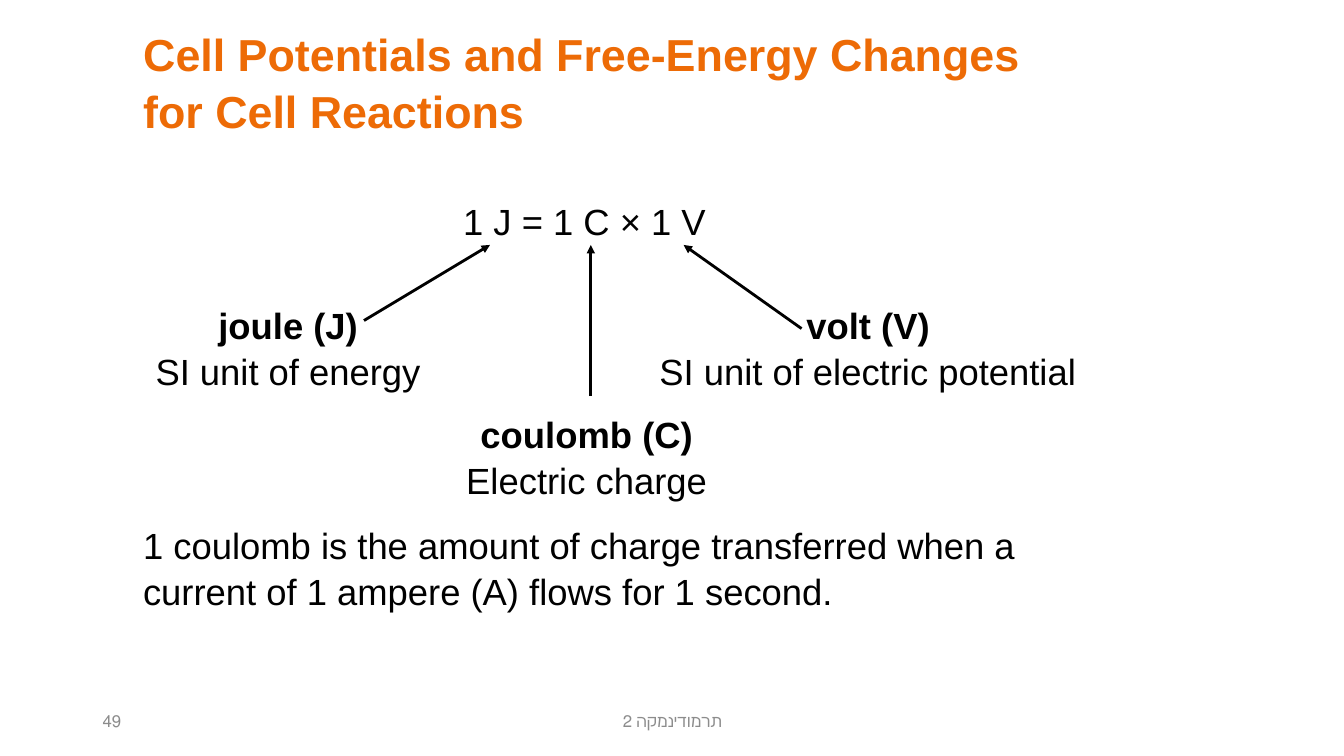
from dataclasses import dataclass

from lxml import etree
from pptx import Presentation
from pptx import util as u
from pptx.dml.color import RGBColor
from pptx.enum import shapes, text
from pptx.oxml.ns import qn

BLACK, ORANGE, GREY = "000000", "ED6B06", "8C8C8C"
LEFT, CENTER = text.PP_ALIGN.LEFT, text.PP_ALIGN.CENTER
TOP, MIDDLE = text.MSO_ANCHOR.TOP, text.MSO_ANCHOR.MIDDLE


@dataclass
class TextBox:
    lines: list[str]
    box: tuple[float, float, float, float]
    size: int = 26
    color: str = BLACK
    font: str = "Arial"
    bold_first: bool = False
    align: text.PP_ALIGN = LEFT
    anchor: text.MSO_ANCHOR = TOP
    wrap: bool = True
    left_inset: float = 0.1
    line_spacing: float = 1.06
    rtl: bool = False


@dataclass
class Arrow:
    start: tuple[float, float]
    end: tuple[float, float]


def rgb(color: str) -> RGBColor:
    return RGBColor.from_string(color)


def unit_label(name: str, meaning: str, box: tuple[float, float, float, float]) -> TextBox:
    return TextBox([name, meaning], box, bold_first=True, align=CENTER, wrap=False)


def footer(line: str, box: tuple[float, float, float, float], align: text.PP_ALIGN) -> TextBox:
    return TextBox([line], box, 12, GREY, "Calibri", align=align, anchor=MIDDLE,
                   line_spacing=1.0, rtl=True)


def add_text(s, item: TextBox) -> None:
    sp = s.shapes.add_textbox(*map(u.Inches, item.box))
    tf = sp.text_frame
    tf.word_wrap = item.wrap
    tf.vertical_anchor = item.anchor
    tf.margin_left = u.Inches(item.left_inset)
    tf.text = "\n".join(item.lines)
    for i, p in enumerate(tf.paragraphs):
        p.alignment = item.align
        p.line_spacing = item.line_spacing
        p.font.size = u.Pt(item.size)
        p.font.name = item.font
        p.font.bold = item.bold_first and i == 0
        p.font.color.rgb = rgb(item.color)
        if item.rtl:
            p._p.get_or_add_pPr().set("rtl", "1")


def add_arrow(s, arrow: Arrow) -> None:
    sp = s.shapes.add_connector(shapes.MSO_CONNECTOR.STRAIGHT,
                                *map(u.Inches, arrow.start + arrow.end))
    sp.line.color.rgb = rgb(BLACK)
    sp.line.width = u.Pt(2)
    etree.SubElement(sp.line._get_or_add_ln(), qn("a:tailEnd"), type="triangle")
    etree.SubElement(sp._element.spPr, qn("a:effectLst"))


TEXTS = [
    footer("תרמודינמקה 2", (4.42, 6.95, 4.5, 0.4), CENTER),
    footer("49", (0.92, 6.95, 3, 0.4), LEFT),
    TextBox(["Cell Potentials and Free-Energy Changes for Cell Reactions"],
            (0.92, 0.18, 9.62, 1.18), 32, ORANGE, bold_first=True, left_inset=0.5),
    TextBox(["1 J = 1 C × 1 V"], (4.48, 1.91, 2.64, 0.54),
            align=CENTER, anchor=MIDDLE, wrap=False),
    unit_label("volt (V)", "SI unit of electric potential", (6.42, 2.93, 4.38, 0.98)),
    unit_label("joule (J)", "SI unit of energy", (1.43, 2.93, 2.86, 0.98)),
    unit_label("coulomb (C)", "Electric charge", (4.51, 4.01, 2.62, 0.98)),
    TextBox(["1 coulomb is the amount of charge transferred when a current of "
             "1 ampere (A) flows for 1 second."], (1.32, 5.11, 9.59, 0.98)),
]

ARROW_TIP_Y = 2.43
ARROWS = [
    Arrow((3.61, 3.18), (4.86, ARROW_TIP_Y)),
    Arrow((7.95, 3.26), (6.78, ARROW_TIP_Y)),
    Arrow((5.86, 3.93), (5.86, ARROW_TIP_Y)),
]


def main() -> None:
    prs = Presentation()
    prs.slide_width, prs.slide_height = u.Inches(13.33), u.Inches(7.5)
    s = prs.slides.add_slide(prs.slide_layouts[6])
    for item in TEXTS:
        add_text(s, item)
    for arrow in ARROWS:
        add_arrow(s, arrow)
    prs.save("out.pptx")


if __name__ == "__main__":
    main()
